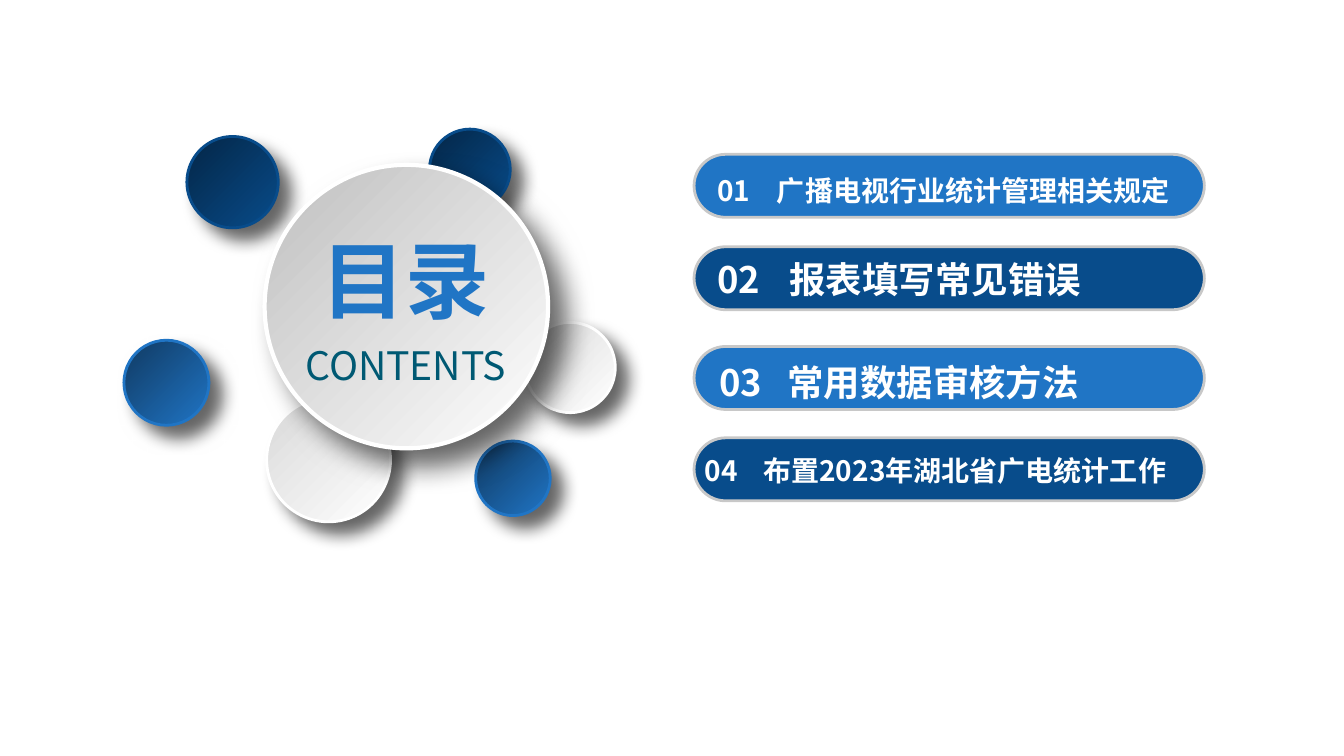
from dataclasses import dataclass

from lxml import etree
from pptx import Presentation
from pptx.dml.color import RGBColor
from pptx.enum.shapes import MSO_SHAPE
from pptx.enum.text import MSO_ANCHOR, MSO_AUTO_SIZE, PP_ALIGN
from pptx.oxml.ns import qn
from pptx.shapes.autoshape import Shape
from pptx.slide import Slide
from pptx.util import Emu, Pt

ELLIPSE, PILL = MSO_SHAPE.OVAL, MSO_SHAPE.ROUNDED_RECTANGLE
MIDDLE, NO_FIT = MSO_ANCHOR.MIDDLE, MSO_AUTO_SIZE.NONE
LEFT, CENTER = PP_ALIGN.LEFT, PP_ALIGN.CENTER
FONT = "Noto Sans CJK SC"
BLUE, NAVY, WHITE, SILVER, TEAL = "2075C5", "084C8B", "FFFFFF", "C8C8C8", "005973"
BAR_X, BAR_W, BAR_H = 661, 486, 60


@dataclass
class Entry:
    number: str
    title: str
    bar_y: int
    color: str
    size: int
    number_x: int
    title_x: int
    text_y: int


@dataclass
class Disc:
    x: int
    y: int
    d: int
    light: str
    dark: str
    line: int = 2
    blur: int = 12
    dist: int = 12


ENTRIES = [
    Entry("01", "广播电视行业统计管理相关规定", 147, BLUE, 20, 683, 740, 155),
    Entry("02", "报表填写常见错误", 235, NAVY, 26, 683, 752, 240),
    Entry("03", "常用数据审核方法", 330, BLUE, 26, 685, 750, 338),
    Entry("04", "布置2023年湖北省广电统计工作", 417, NAVY, 20, 671, 727, 422),
]
DISCS = [
    Disc(453, 420, 71, BLUE, "103A62"),
    Disc(178, 130, 87, NAVY, "042646"),
    Disc(118, 324, 81, BLUE, "103A62"),
    Disc(409, 123, 77, NAVY, "042646"),
    Disc(254, 379, 118, WHITE, "D9D9D9"),
    Disc(500, 307, 86, WHITE, "D9D9D9"),
    Disc(252, 157, 270, WHITE, "BFBFBF", 3, 20, 16),
]


def px(n: int) -> Emu:
    return Emu(n * 9525)


def rgb(color: str) -> RGBColor:
    return RGBColor.from_string(color)


def add_outlined(s: Slide, kind: int, box: tuple[int, ...], line: str, width: int) -> Shape:
    sp = s.shapes.add_shape(kind, *map(px, box))
    sp.shadow.inherit = False
    sp.line.color.rgb = rgb(line)
    sp.line.width = Pt(width)
    return sp


def add_bar(s: Slide, entry: Entry) -> None:
    sp = add_outlined(s, PILL, (BAR_X, entry.bar_y, BAR_W, BAR_H), SILVER, 2)
    sp.adjustments[0] = 0.5
    sp.fill.solid()
    sp.fill.fore_color.rgb = rgb(entry.color)


def add_disc(s: Slide, disc: Disc) -> None:
    sp = add_outlined(s, ELLIPSE, (disc.x, disc.y, disc.d, disc.d), disc.light, disc.line)
    sp.fill.gradient()
    sp.fill.gradient_angle = 135
    for stop, color in zip(sp.fill.gradient_stops, (disc.light, disc.dark)):
        stop.color.rgb = rgb(color)
    effects = sp.element.spPr.find(qn("a:effectLst"))
    shadow = etree.SubElement(effects, qn("a:outerShdw"), {
        "blurRad": str(Pt(disc.blur)), "dist": str(Pt(disc.dist)),
        "dir": "2700000", "algn": "tl", "rotWithShape": "0"})
    black = etree.SubElement(shadow, qn("a:srgbClr"), val="000000")
    etree.SubElement(black, qn("a:alpha"), val="60000")


def set_text(sp: Shape, text: str, size: int, color: str, bold: bool,
             align: int = CENTER, tab: int = 0) -> None:
    tf = sp.text_frame
    frame = {"word_wrap": True, "auto_size": NO_FIT, "vertical_anchor": MIDDLE,
             "margin_left": 0, "margin_right": 0, "margin_top": 0, "margin_bottom": 0}
    for name, value in frame.items():
        setattr(tf, name, value)
    p = tf.paragraphs[0]
    p.alignment = align
    if tab:
        tabs = etree.SubElement(p._p.get_or_add_pPr(), qn("a:tabLst"))
        etree.SubElement(tabs, qn("a:tab"), pos=str(px(tab)), algn="l")
    r = p.add_run()
    r.text = text
    for name, value in {"name": FONT, "size": Pt(size), "bold": bold}.items():
        setattr(r.font, name, value)
    r.font.color.rgb = rgb(color)
    etree.SubElement(r._r.get_or_add_rPr(), qn("a:ea"), typeface=FONT)


def add_entry_text(s: Slide, entry: Entry) -> None:
    width = BAR_X + BAR_W - entry.number_x
    sp = s.shapes.add_textbox(*map(px, (entry.number_x, entry.text_y, width, 52)))
    set_text(sp, f"{entry.number}\t{entry.title}", entry.size, WHITE, True,
             LEFT, entry.title_x - entry.number_x)


def add_heading(s: Slide) -> None:
    sp = s.shapes.title
    sp.element.getparent().append(sp.element)
    box = {"left": 296, "top": 212, "width": 180, "height": 107}
    for name, value in box.items():
        setattr(sp, name, px(value))
    set_text(sp, "目录", 60, BLUE, True)
    sp = s.shapes.add_textbox(*map(px, (263, 320, 247, 55)))
    set_text(sp, "CONTENTS", 28, TEAL, False)


def main() -> None:
    prs = Presentation()
    prs.slide_width, prs.slide_height = px(1280), px(720)
    s = prs.slides.add_slide(prs.slide_layouts[5])
    for entry in ENTRIES:
        add_bar(s, entry)
    for entry in ENTRIES:
        add_entry_text(s, entry)
    for disc in DISCS:
        add_disc(s, disc)
    add_heading(s)
    prs.save("out.pptx")


if __name__ == "__main__":
    main()
